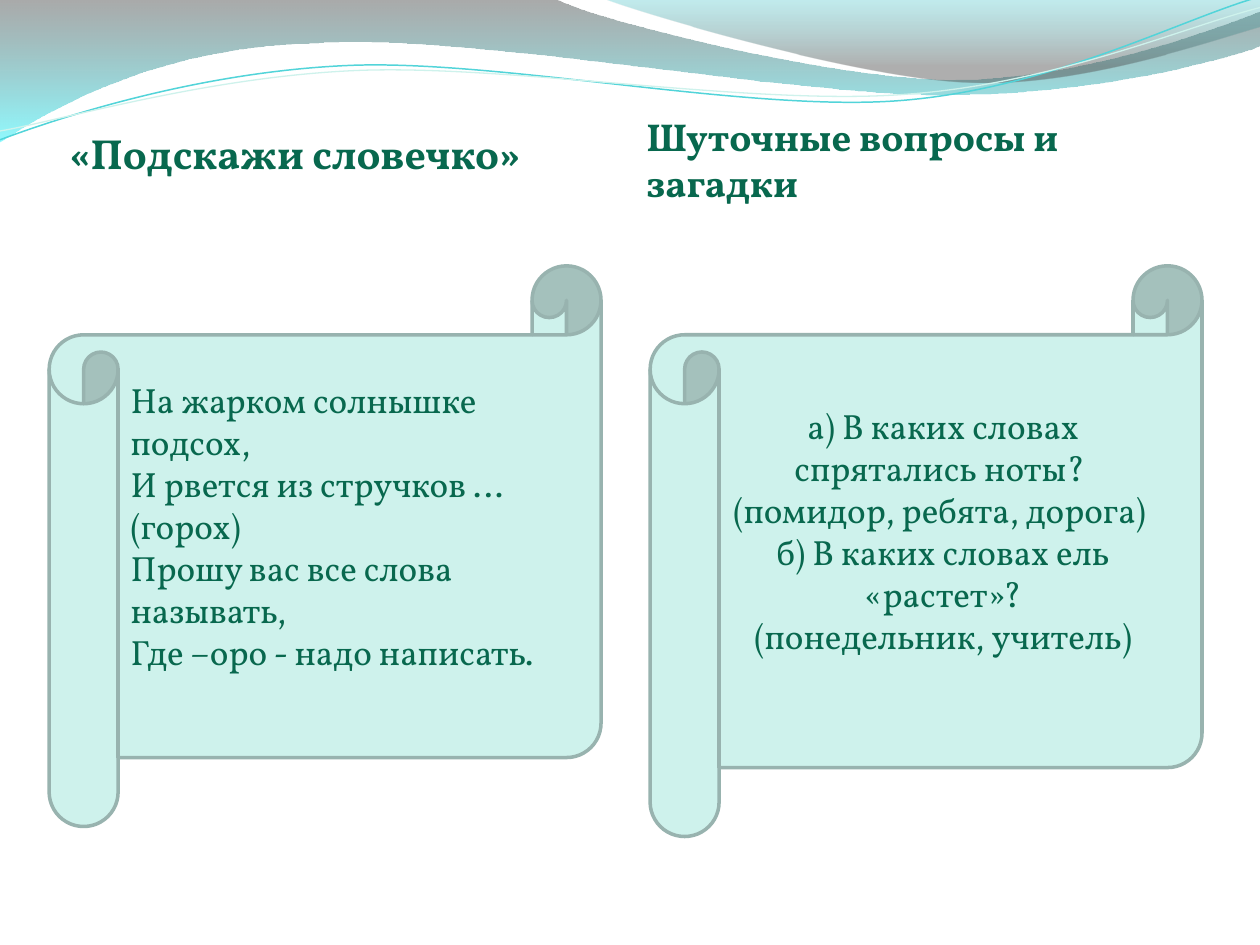
from lxml.etree import SubElement
from pptx import Presentation
from pptx.dml.color import RGBColor
from pptx.enum.shapes import MSO_SHAPE as Shape
from pptx.enum.text import MSO_ANCHOR as Anchor, MSO_AUTO_SIZE as AutoSize, PP_ALIGN as Align
from pptx.oxml.ns import qn
from pptx.util import Inches, Pt

FONT = "Vollkorn"
GREEN, MINT, GREY_GREEN = "08684E", "CEF2EC", "98B3AF"
COMPARISON_LAYOUT = 4

# In inches: a step of 2 numbers is straight, a step of 6 is a cubic curve.
WIDE_WAVE = [
    (0, 0), (4.4, -0.01), (4.76, 0.17, 6.64, 0.63, 7.58, 0.63),
    (8.53, 0.63, 9.58, 0.26, 10, 0.09), (10.01, 0.36),
    (9.83, 0.44, 8.7, 0.76, 7.46, 0.75), (6.22, 0.75, 3.82, 0.28, 2.57, 0.34),
    (1.29, 0.36, 0.46, 0.83, -0.01, 1.13),
]
RIGHT_WAVE = [
    (4.79, -0.01), (5.09, 0.11, 6.82, 0.62, 7.69, 0.65),
    (8.56, 0.69, 9.61, 0.32, 10, 0.21), (10, 0),
]
TEAL_CURVE = [
    (0, 1.11), (0.48, 0.93, 1.58, 0.57, 2.77, 0.52),
    (3.95, 0.47, 5.93, 0.89, 7.13, 0.8), (8.33, 0.71, 9.38, 0.15, 9.98, -0.02),
]
PALE_CURVE = [
    (0, 1.04), (0.47, 0.96, 1.64, 0.61, 2.83, 0.56),
    (4.03, 0.51, 5.97, 0.84, 7.17, 0.75), (8.36, 0.67, 9.41, 0.21, 10, 0.06),
]

POEM = """На жарком солнышке подсох, 
И рвется из стручков … (горох) 
Прошу вас все слова называть, 
Где –оро - надо написать. """
RIDDLES = """а) В каких словах спрятались ноты? 
(помидор, ребята, дорога) 
б) В каких словах ель «растет»?
(понедельник, учитель)"""


def color(value):
    return RGBColor.from_string(value)


def add_outline(slide, path, close):
    """Build a freeform through the path's end points, then bend its curved steps."""
    steps = [[Inches(number) for number in step] for step in path]
    builder = slide.shapes.build_freeform(*steps[0])
    builder.add_line_segments([step[-2:] for step in steps[1:]], close=close)
    outline = builder.convert_to_shape()
    outline.shadow.inherit = False
    segments = list(outline.element.iter(qn("a:lnTo")))
    for segment, step in zip(segments, steps[1:]):
        if len(step) == 6:
            bend(segment, step, outline.left, outline.top)
    return outline


def bend(segment, step, left, top):
    """Replace a straight path segment by a cubic curve."""
    parent = segment.getparent()
    curve = SubElement(parent, qn("a:cubicBezTo"))
    for x, y in zip(step[::2], step[1::2]):
        SubElement(curve, qn("a:pt"), x=str(x - left), y=str(y - top))
    parent.replace(segment, curve)


def add_wave(slide, path, stops):
    """Draw a wave filled downwards; stops are (position, colour, opacity percent)."""
    wave = add_outline(slide, path, close=True)
    wave.line.fill.background()
    wave.fill.gradient()
    wave.fill.gradient_angle = 270
    for stop, (position, value, _) in zip(wave.fill.gradient_stops, stops):
        stop.position = position
        stop.color.rgb = color(value)
    for node, (_, _, opacity) in zip(wave.element.iter(qn("a:srgbClr")), stops):
        SubElement(node, qn("a:alpha"), val=str(opacity * 1000))


def add_curve(slide, path, value, width):
    curve = add_outline(slide, path, close=False)
    curve.fill.background()
    curve.line.color.rgb = color(value)
    curve.line.width = Pt(width)


def write(shape, text, size, align, bold=False):
    frame = shape.text_frame
    frame.word_wrap = True
    frame.auto_size = AutoSize.NONE
    frame.vertical_anchor = Anchor.MIDDLE
    para = frame.paragraphs[0]
    para.text = text
    para.alignment = align
    font = para.font
    font.name, font.size, font.bold = FONT, Pt(size), bold
    font.color.rgb = color(GREEN)


def set_heading(box, text, left, height, size, bottom=0):
    box.left, box.top = Inches(left), Inches(0.94)
    box.width, box.height = Inches(4.42), Inches(height)
    write(box, text, size, Align.LEFT, bold=True)
    frame = box.text_frame
    frame.margin_left = frame.margin_right = Inches(0.05)
    frame.margin_top, frame.margin_bottom = 0, Inches(bottom)


def add_scroll(slide, text, left, height, align):
    scroll = slide.shapes.add_shape(
        Shape.HORIZONTAL_SCROLL, Inches(left), Inches(2.11), Inches(4.38), Inches(height))
    scroll.shadow.inherit = False
    scroll.fill.solid()
    scroll.fill.fore_color.rgb = color(MINT)
    scroll.line.color.rgb = color(GREY_GREEN)
    scroll.line.width = Pt(2)
    write(scroll, text, 20, align)
    scroll.text_frame.margin_bottom = Inches(0.38)


def main():
    deck = Presentation()
    deck.slide_width, deck.slide_height = Inches(10), Inches(7.5)
    slide = deck.slides.add_slide(deck.slide_layouts[COMPARISON_LAYOUT])

    add_wave(slide, WIDE_WAVE, [(0, "424242", 45), (1, "35F7FF", 55)])
    add_wave(slide, RIGHT_WAVE, [(0, "34C1C7", 30), (0.8, "4F4F4F", 45)])
    add_curve(slide, TEAL_CURVE, "52D4D9", 0.85)
    add_curve(slide, PALE_CURVE, MINT, 0.75)

    boxes = {box.placeholder_format.idx: box for box in slide.placeholders}
    set_heading(boxes.pop(1), "«Подскажи словечко»", 0.5, 0.55, 24)
    set_heading(boxes.pop(3), "Шуточные вопросы и загадки", 5.08, 1.02, 22.2, bottom=0.38)
    for unused in boxes.values():
        unused.element.getparent().remove(unused.element)

    add_scroll(slide, POEM, 0.39, 4.45, Align.LEFT)
    add_scroll(slide, RIDDLES, 5.16, 4.53, Align.CENTER)
    deck.save("out.pptx")


if __name__ == "__main__":
    main()
